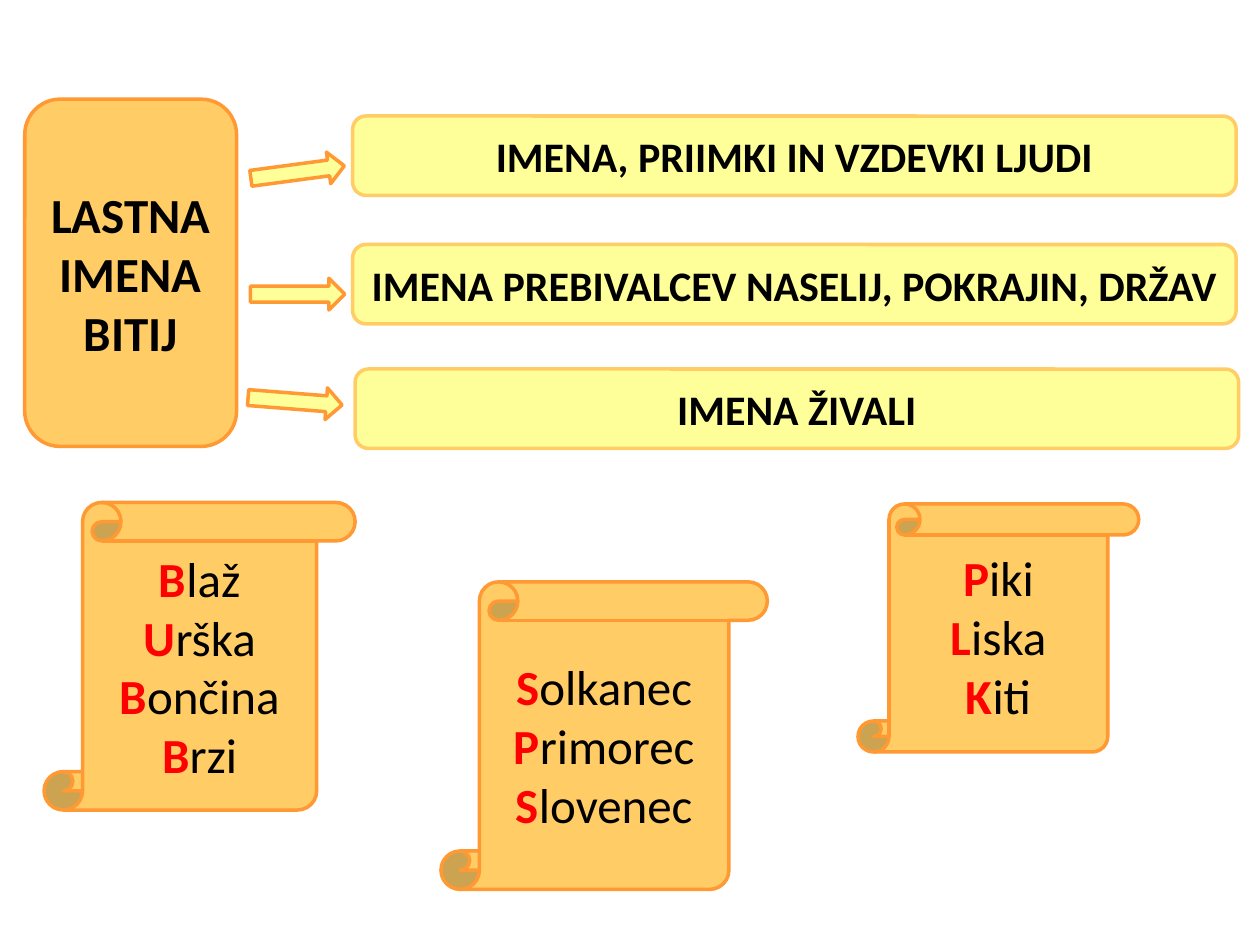
from pptx import Presentation
from pptx.dml.color import RGBColor
from pptx.enum.shapes import MSO_SHAPE
from pptx.enum.text import MSO_ANCHOR, PP_ALIGN
from pptx.util import Cm, Pt

ORANGE = RGBColor(0xFF, 0xCC, 0x66)
DARK_ORANGE = RGBColor(0xFF, 0x99, 0x33)
YELLOW = RGBColor(0xFF, 0xFF, 0x99)
RED = RGBColor(0xFF, 0x00, 0x00)
BLACK = RGBColor(0x00, 0x00, 0x00)

CATEGORIES = [
    (7.11, 2.34, "IMENA, PRIIMKI IN VZDEVKI LJUDI"),
    (7.11, 4.93, "IMENA PREBIVALCEV NASELIJ, POKRAJIN, DRŽAV"),
    (7.16, 7.44, "IMENA ŽIVALI"),
]
SCROLLS = [
    (8.89, 11.73, 6.58, 6.2, ["Solkanec", "Primorec", "Slovenec"]),
    (0.89, 10.13, 6.27, 6.2, ["Blaž", "Urška", "Bončina", "Brzi"]),
    (6.81 * 2.54, 10.16, 5.66, 5, ["Piki", "Liska", "Kiti"]),
]
ARROWS = [(5.05, 3.15, -7.6), (5.05, 5.61, 0), (5, 7.77, 4.5)]


class NameDiagram:
    """Draws the styled elements of a name diagram on one slide."""

    font_name = "Calibri"
    line_width = Pt(2)

    def __init__(self, slide):
        self.slide = slide

    def add_shape(self, kind, left, top, width, height, fill, line):
        shape = self.slide.shapes.add_shape(
            kind, Cm(left), Cm(top), Cm(width), Cm(height))
        shape.shadow.inherit = False
        shape.fill.solid()
        shape.fill.fore_color.rgb = fill
        shape.line.color.rgb = line
        shape.line.width = self.line_width
        return shape

    def add_paragraphs(self, shape, lines, size):
        frame = shape.text_frame
        frame.word_wrap = True
        frame.vertical_anchor = MSO_ANCHOR.MIDDLE
        frame.text = "\n".join(lines)
        for paragraph in frame.paragraphs:
            paragraph.alignment = PP_ALIGN.CENTER
            paragraph.font.name = self.font_name
            paragraph.font.size = Pt(size)
            paragraph.font.color.rgb = BLACK
        return frame.paragraphs

    def add_box(self, left, top, width, height, lines, size, fill, line):
        box = self.add_shape(MSO_SHAPE.ROUNDED_RECTANGLE,
                             left, top, width, height, fill, line)
        for paragraph in self.add_paragraphs(box, lines, size):
            paragraph.font.bold = True

    def add_scroll(self, left, top, width, height, names):
        scroll = self.add_shape(MSO_SHAPE.VERTICAL_SCROLL,
                                left, top, width, height, ORANGE, DARK_ORANGE)
        for paragraph, name in zip(self.add_paragraphs(scroll, names, 28), names):
            initial = paragraph.runs[0]
            initial.text = name[0]
            initial.font.bold = True
            initial.font.color.rgb = RED
            paragraph.add_run().text = name[1:]

    def add_arrow(self, left, top, rotation):
        arrow = self.add_shape(MSO_SHAPE.RIGHT_ARROW,
                               left, top, 1.9, 0.64, YELLOW, DARK_ORANGE)
        arrow.rotation = rotation


def main():
    presentation = Presentation()
    presentation.slide_width = Cm(25.4)
    presentation.slide_height = Cm(19.05)
    diagram = NameDiagram(
        presentation.slides.add_slide(presentation.slide_layouts[6]))

    diagram.add_box(0.5, 2, 4.27, 7, ["LASTNA IMENA", "BITIJ"],
                    28, ORANGE, DARK_ORANGE)
    for left, top, text in CATEGORIES:
        diagram.add_box(left, top, 17.81, 1.6, [text], 24, YELLOW, ORANGE)
    for scroll in SCROLLS:
        diagram.add_scroll(*scroll)
    for arrow in ARROWS:
        diagram.add_arrow(*arrow)

    presentation.save("out.pptx")


if __name__ == "__main__":
    main()
